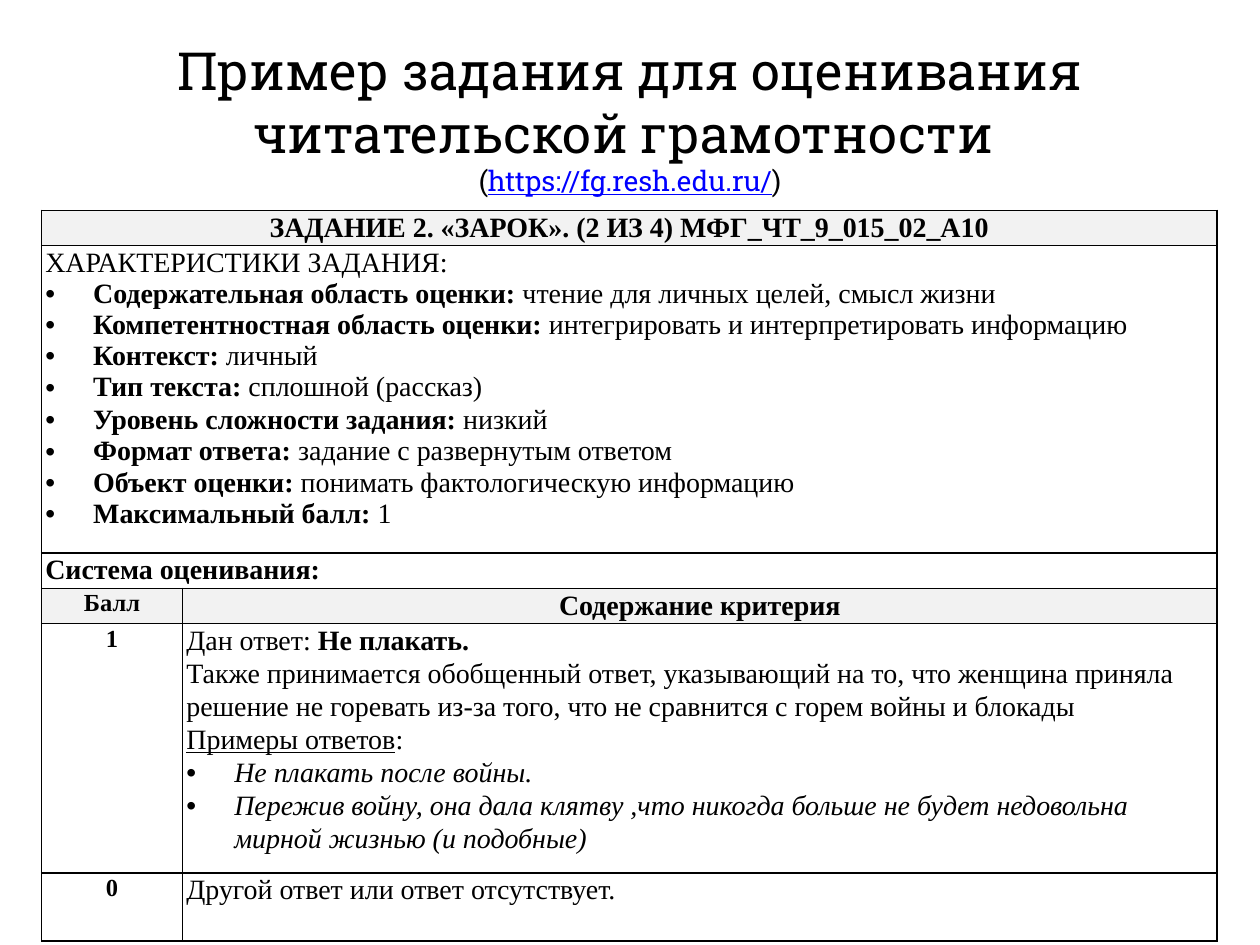
from dataclasses import dataclass

import pptx
import pptx.dml.color
import pptx.enum.text
import pptx.oxml
import pptx.oxml.ns
import pptx.util
from pptx.util import Inches

ALIGN = pptx.enum.text.PP_ALIGN
ANCHOR = pptx.enum.text.MSO_ANCHOR


@dataclass(frozen=True)
class Theme:
    title_font: str = "Roboto Slab"
    body_font: str = "Times New Roman"
    title_size: int = 30
    body_size: int = 16
    score_size: int = 14
    text: str = "000000"
    link: str = "0000FF"
    header_fill: str = "F2F2F2"
    cell_fill: str = "FFFFFF"
    border_width: int = 1
    line_spacing: float = 1.06


THEME = Theme()

TASK_CODE = "ЗАДАНИЕ 2. «ЗАРОК». (2 ИЗ 4) МФГ_ЧТ_9_015_02_А10"
CHARACTERISTICS = [
    ("Содержательная область оценки:", " чтение для личных целей, смысл жизни"),
    ("Компетентностная область оценки:", " интегрировать и интерпретировать информацию"),
    ("Контекст:", " личный"),
    ("Тип текста:", " сплошной (рассказ)"),
    ("Уровень сложности задания:", " низкий"),
    ("Формат ответа:", " задание с развернутым ответом"),
    ("Объект оценки:", " понимать фактологическую информацию"),
    ("Максимальный балл:", " 1"),
]
SAMPLE_ANSWERS = [
    "Не плакать после войны.",
    "Пережив войну, она дала клятву ,что никогда больше не будет недовольна "
    "мирной жизнью (и подобные)",
]
COLUMN_WIDTHS = [1.12, 8.21]
ROW_HEIGHTS = [0.28, 2.44, 0.28, 0.28, 1.98, 0.54]


def color(value):
    return pptx.dml.color.RGBColor.from_string(value)


def add_run(paragraph, text, size=THEME.body_size, font=THEME.body_font,
            rgb=THEME.text, bold=False, italic=False, underline=False):
    run = paragraph.add_run()
    run.text = text
    run.font.name = font
    run.font.size = pptx.util.Pt(size)
    run.font.color.rgb = color(rgb)
    run.font.bold = bold
    run.font.italic = italic
    run.font.underline = underline


def next_paragraph(frame, align=ALIGN.LEFT, spacing=THEME.line_spacing):
    """Return the empty first paragraph, or a new one after it."""
    first = frame.paragraphs[0]
    paragraph = frame.add_paragraph() if first.runs else first
    paragraph.alignment = align
    paragraph.line_spacing = spacing
    paragraph.space_before = pptx.util.Pt(0)
    return paragraph


def add_bullet(paragraph):
    properties = paragraph._p.get_or_add_pPr()
    properties.set("marL", str(Inches(0.38)))
    properties.set("indent", str(Inches(-0.38)))
    namespace = pptx.oxml.ns.nsdecls("a")
    properties.append(pptx.oxml.parse_xml(f'<a:buFont {namespace} typeface="Arial"/>'))
    properties.append(pptx.oxml.parse_xml(f'<a:buChar {namespace} char="•"/>'))


def set_borders(cell):
    """Draw the four sides; the fill must be set afterwards."""
    properties = cell._tc.get_or_add_tcPr()
    width = pptx.util.Pt(THEME.border_width)
    for side in ("lnL", "lnR", "lnT", "lnB"):
        properties.append(pptx.oxml.parse_xml(
            f'<a:{side} {pptx.oxml.ns.nsdecls("a")} w="{width}"><a:solidFill>'
            f'<a:srgbClr val="{THEME.text}"/></a:solidFill></a:{side}>'))


def format_cell(cell, fill):
    cell.margin_left = cell.margin_right = Inches(0.03)
    cell.margin_top = cell.margin_bottom = 0
    cell.vertical_anchor = ANCHOR.TOP
    set_borders(cell)
    cell.fill.solid()
    cell.fill.fore_color.rgb = color(fill)


def place_title(slide, left, top, width, height):
    title = slide.shapes.title
    title.left, title.top, title.width, title.height = left, top, width, height
    frame = title.text_frame
    frame.word_wrap = True
    frame.auto_size = pptx.enum.text.MSO_AUTO_SIZE.NONE
    frame.vertical_anchor = ANCHOR.TOP
    for line in ("Пример задания для оценивания", "читательской грамотности "):
        add_run(next_paragraph(frame, ALIGN.CENTER, 1.0), line,
                THEME.title_size, THEME.title_font)
    address = next_paragraph(frame, ALIGN.CENTER, 1.0)
    add_run(address, "(", font=THEME.title_font)
    add_run(address, "https://fg.resh.edu.ru/", font=THEME.title_font,
            rgb=THEME.link, underline=True)
    add_run(address, ")", font=THEME.title_font)


def fill_characteristics(frame):
    add_run(next_paragraph(frame), "ХАРАКТЕРИСТИКИ ЗАДАНИЯ:")
    for label, value in CHARACTERISTICS:
        looser = label.startswith("Уровень")
        paragraph = next_paragraph(frame, spacing=THEME.line_spacing if looser else 1.0)
        add_bullet(paragraph)
        add_run(paragraph, label, bold=True)
        add_run(paragraph, value)


def fill_full_score(frame):
    answer = next_paragraph(frame)
    add_run(answer, "Дан ответ: ")
    add_run(answer, "Не плакать.", bold=True)
    add_run(next_paragraph(frame),
            "Также принимается обобщенный ответ, указывающий на то, что женщина приняла "
            "решение не горевать из-за того, что не сравнится с горем войны и блокады")
    examples = next_paragraph(frame)
    add_run(examples, "Примеры ответов", underline=True)
    add_run(examples, ":")
    for sample in SAMPLE_ANSWERS:
        paragraph = next_paragraph(frame)
        add_bullet(paragraph)
        add_run(paragraph, sample, italic=True)


def place_task_table(slide, left, top, width, height):
    shape = slide.shapes.add_table(len(ROW_HEIGHTS), len(COLUMN_WIDTHS),
                                   left, top, width, height)
    table = shape.table
    table.first_row = table.horz_banding = False
    for column, size in zip(table.columns, COLUMN_WIDTHS):
        column.width = Inches(size)
    for row, size in zip(table.rows, ROW_HEIGHTS):
        row.height = Inches(size)
    for index, row in enumerate(table.rows):
        for cell in row.cells:
            format_cell(cell, THEME.header_fill if index in (0, 3) else THEME.cell_fill)
    for index in range(3):
        table.cell(index, 0).merge(table.cell(index, 1))

    def frame(row, column=0):
        return table.cell(row, column).text_frame

    add_run(next_paragraph(frame(0), ALIGN.CENTER), TASK_CODE, bold=True)
    fill_characteristics(frame(1))
    add_run(next_paragraph(frame(2)), "Система оценивания:", bold=True)
    for row, score in enumerate(("Балл", "1", "0"), start=3):
        add_run(next_paragraph(frame(row), ALIGN.CENTER), score,
                THEME.score_size, bold=True)
    add_run(next_paragraph(frame(3, 1), ALIGN.CENTER), "Содержание критерия", bold=True)
    fill_full_score(frame(4, 1))
    add_run(next_paragraph(frame(5, 1)), "Другой ответ или ответ отсутствует.")


def main():
    presentation = pptx.Presentation()
    presentation.slide_width, presentation.slide_height = Inches(10), Inches(7.5)
    slide = presentation.slides.add_slide(presentation.slide_layouts[5])
    place_title(slide, 0, Inches(0.25), Inches(10), Inches(1.38))
    place_task_table(slide, Inches(0.33), Inches(1.67),
                     Inches(sum(COLUMN_WIDTHS)), Inches(sum(ROW_HEIGHTS)))
    presentation.save("out.pptx")


if __name__ == "__main__":
    main()
